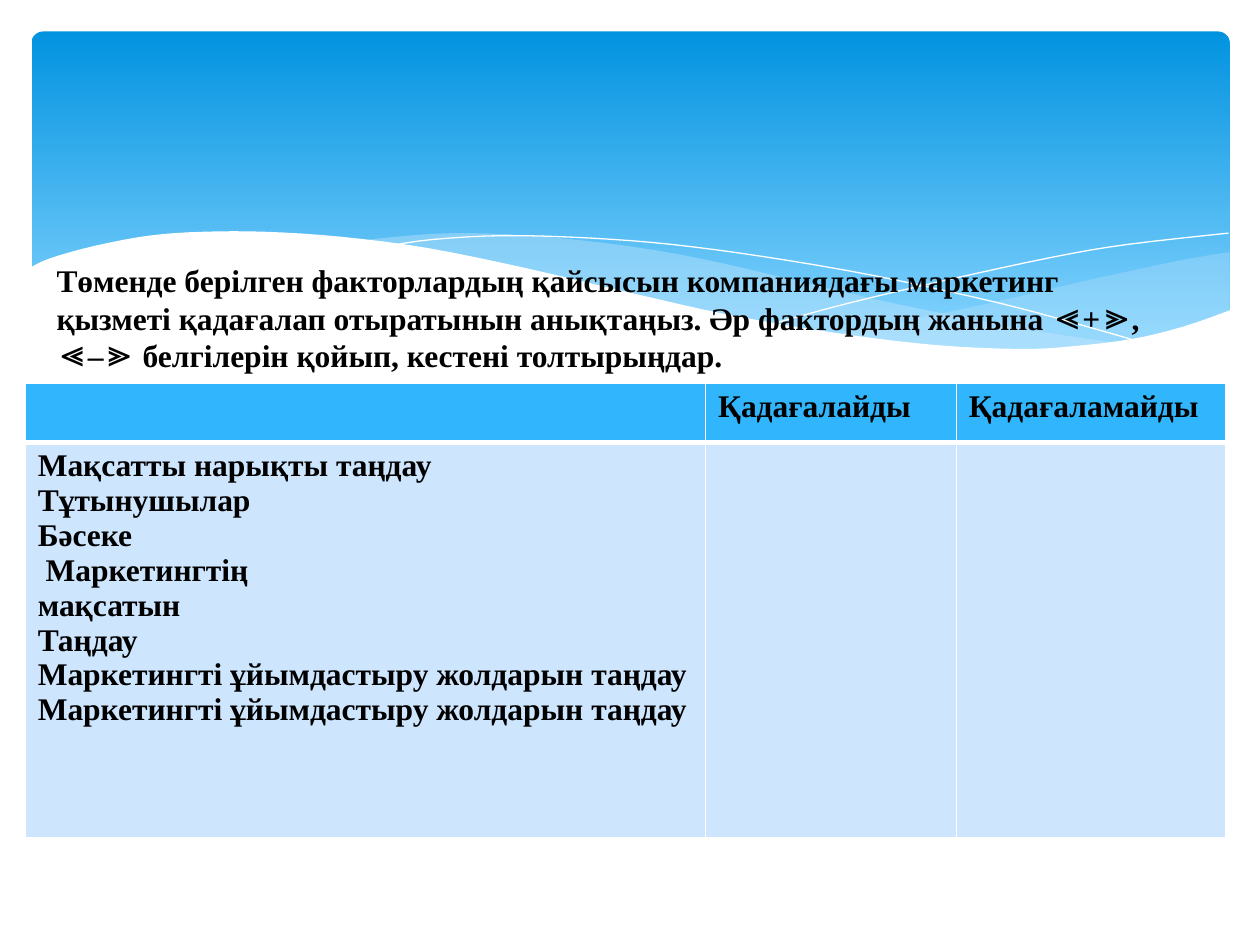
from dataclasses import dataclass
from typing import Optional

from lxml import etree
from pptx import Presentation
from pptx.dml.color import RGBColor
from pptx.enum.shapes import MSO_SHAPE
from pptx.oxml.ns import qn
from pptx.util import Inches, Pt

ROUNDED = MSO_SHAPE.ROUNDED_RECTANGLE
FONT = "Times New Roman"
COLORS = {
    "sky_top": "0293E0",
    "sky_bottom": "83D3FE",
    "haze": "C6E7FC",
    "white": "FFFFFF",
    "header": "31B6FD",
    "body": "CEE5FE",
    "text": "000000",
}
Points = list[tuple[float, float]]


@dataclass
class Wave:
    edges: list[Points]  # each edge is smoothed, then the edges are joined
    fill: Optional[str] = None
    opacity: int = 100


WAVES = [
    # Right and middle haze
    Wave([[(9.76, 2), (9.35, 2.07), (8.61, 2.23), (7.79, 2.42), (7.06, 2.57), (6.61, 2.65)],
          [(6.61, 2.65), (7.05, 2.71), (7.57, 2.76), (8.14, 2.78), (8.72, 2.74),
           (9.21, 2.65), (9.49, 2.57), (9.76, 2.47)]], "haze", 29),
    Wave([[(8.93, 2.73), (8.37, 2.65), (7.75, 2.54), (7.06, 2.4), (6.29, 2.22), (5.55, 2.05),
           (4.89, 1.94), (4.2, 1.87), (3.61, 1.85), (3.13, 1.88), (2.86, 1.91)],
          [(2.86, 1.91), (3.42, 1.99), (4.04, 2.11), (4.91, 2.32), (5.66, 2.48), (6.34, 2.61),
           (6.95, 2.7), (7.48, 2.76), (8.07, 2.78), (8.57, 2.77), (8.93, 2.73)]], "haze", 40),
    # Thin white curves
    Wave([[(3.09, 1.95), (3.44, 1.9), (4.01, 1.87), (4.69, 1.89), (5.33, 1.94), (6.08, 2.04),
           (6.95, 2.19), (7.95, 2.41), (8.69, 2.61), (9.07, 2.72)]]),
    Wave([[(6.13, 2.57), (6.72, 2.41), (7.48, 2.23), (8.36, 2.04), (8.95, 1.94), (9.75, 1.85)]]),
    # White foreground
    Wave([[(9.77, 2.46), (9.4, 2.59), (8.99, 2.69), (8.5, 2.75), (8.09, 2.77), (7.44, 2.74),
           (6.68, 2.65), (5.79, 2.5), (5.03, 2.33), (4.18, 2.13), (3.4, 1.97), (2.71, 1.88),
           (2.11, 1.84), (1.61, 1.84), (1.19, 1.87), (0.76, 1.95), (0.4, 2.05), (0.23, 2.13)],
          [(0.23, 3.29), (9.77, 3.29)]], "white"),
]

PROMPT = ("Төменде берілген факторлардың қайсысын компаниядағы маркетинг қызметі қадағалап "
          "отыратынын анықтаңыз. Әр фактордың жанына ≪+≫, ≪–≫ белгілерін қойып, кестені "
          "толтырыңдар.")
FACTORS = [
    "Мақсатты нарықты таңдау",
    "Тұтынушылар",
    "Бәсеке",
    " Маркетингтің",
    "мақсатын",
    "Таңдау",
    "Маркетингті ұйымдастыру жолдарын таңдау",
    "Маркетингті ұйымдастыру жолдарын таңдау",
]
ROWS = [["", "Қадағалайды", "Қадағаламайды"], ["\n".join(FACTORS), "", ""]]
COLUMN_WIDTHS = [5.4, 1.99, 2.14]
ROW_HEIGHTS = [0.47, 3.14]


def rgb(name: str) -> RGBColor:
    return RGBColor.from_string(COLORS[name])


def smooth(points: Points, steps: int = 4) -> Points:
    """Catmull-Rom curve through the points; two points stay a straight line."""
    if len(points) < 3:
        return points
    padded = [points[0], *points, points[-1]]
    curve = [points[0]]
    for a, b, c, d in zip(padded, padded[1:], padded[2:], padded[3:]):
        for step in range(1, steps + 1):
            t = step / steps
            x, y = (
                (2 * q + (r - p) * t + (2 * p - 5 * q + 4 * r - s) * t**2
                 + (3 * q - p - 3 * r + s) * t**3) / 2
                for p, q, r, s in zip(a, b, c, d)
            )
            curve.append((x, y))
    return curve


def add_sky(page) -> None:
    sky = page.shapes.add_shape(ROUNDED, Inches(0.25), Inches(0.25), Inches(9.51), Inches(2.7))
    sky.adjustments[0] = 0.034
    sky.shadow.inherit = False
    sky.line.fill.background()
    sky.fill.gradient()
    sky.fill.gradient_angle = 270
    top, bottom = sky.fill.gradient_stops
    top.color.rgb = rgb("sky_top")
    bottom.color.rgb = rgb("sky_bottom")
    bottom.position = 0.9


def add_wave(page, wave: Wave) -> None:
    points = [(Inches(x), Inches(y)) for edge in wave.edges for x, y in smooth(edge)]
    builder = page.shapes.build_freeform(*points[0])
    builder.add_line_segments(points[1:], close=wave.fill is not None)
    shape = builder.convert_to_shape()
    shape.shadow.inherit = False
    if wave.fill is None:
        shape.fill.background()
        shape.line.color.rgb = rgb("white")
        shape.line.width = Pt(0)
        return
    shape.line.fill.background()
    shape.fill.solid()
    shape.fill.fore_color.rgb = rgb(wave.fill)
    if wave.opacity < 100:
        color = shape._element.spPr.find(qn("a:solidFill"))[0]
        etree.SubElement(color, qn("a:alpha"), val=str(wave.opacity * 1000))


def write(frame, text: str) -> None:
    frame.text = text
    for para in frame.paragraphs:
        para.font.name = FONT
        para.font.size = Pt(18)
        para.font.bold = True
        para.font.color.rgb = rgb("text")


def add_border(cell, side: str, points: float) -> None:
    line = etree.Element(qn(f"a:{side}"), w=str(Pt(points)))
    fill = etree.SubElement(line, qn("a:solidFill"))
    etree.SubElement(fill, qn("a:srgbClr"), val=COLORS["white"])
    properties = cell._tc.get_or_add_tcPr()
    borders = [child for child in properties if child.tag.startswith(qn("a:ln"))]
    properties.insert(len(borders), line)


def add_factor_table(page) -> None:
    frame = page.shapes.add_table(
        len(ROWS), len(COLUMN_WIDTHS), Inches(0.2), Inches(3.04),
        Inches(sum(COLUMN_WIDTHS)), Inches(sum(ROW_HEIGHTS)))
    table = frame.table
    for column, width in zip(table.columns, COLUMN_WIDTHS):
        column.width = Inches(width)
    for r, (row, height) in enumerate(zip(ROWS, ROW_HEIGHTS)):
        table.rows[r].height = Inches(height)
        for c, text in enumerate(row):
            cell = table.cell(r, c)
            write(cell.text_frame, text)
            cell.fill.solid()
            cell.fill.fore_color.rgb = rgb("body" if r else "header")
            widths = {"lnL": 1, "lnR": 1, "lnT": 3 if r else 1, "lnB": 1 if r else 3}
            for side, points in widths.items():
                add_border(cell, side, points)


def add_prompt(page) -> None:
    box = page.shapes.add_textbox(Inches(0.35), Inches(2.02), Inches(8.98), Inches(1.01))
    box.text_frame.word_wrap = True
    write(box.text_frame, PROMPT)


def main() -> None:
    deck = Presentation()
    deck.slide_width, deck.slide_height = Inches(10), Inches(7.5)
    page = deck.slides.add_slide(deck.slide_layouts[6])
    # Backdrop
    add_sky(page)
    for wave in WAVES:
        add_wave(page, wave)
    # Content
    add_factor_table(page)
    add_prompt(page)
    deck.save("out.pptx")


if __name__ == "__main__":
    main()
